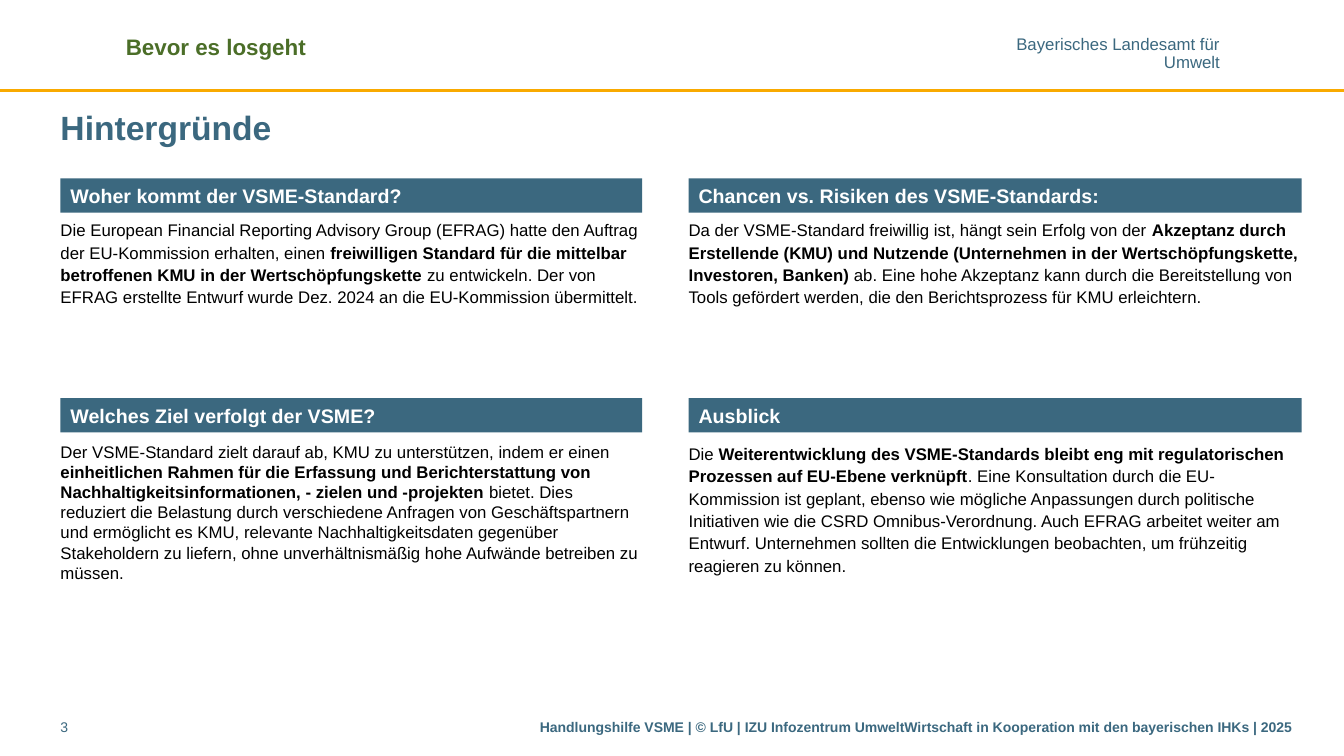
"""Build the slide on the background of the VSME standard."""
from dataclasses import dataclass
from typing import NamedTuple

from lxml.etree import SubElement
from pptx import Presentation
from pptx.dml.color import RGBColor
from pptx.enum.shapes import MSO_CONNECTOR, MSO_SHAPE
from pptx.enum.text import MSO_ANCHOR, MSO_AUTO_SIZE, PP_ALIGN
from pptx.oxml.ns import qn
from pptx.util import Inches, Pt

BLUE = RGBColor(0x3B, 0x68, 0x7F)
GREEN = RGBColor(0x4B, 0x6E, 0x28)
GOLD = RGBColor(0xF9, 0xAA, 0x00)
WHITE = RGBColor(0xFF, 0xFF, 0xFF)
BLACK = RGBColor(0x00, 0x00, 0x00)


class Box(NamedTuple):
    left: float
    top: float
    width: float
    height: float


class Column(NamedTuple):
    left: float
    bar_width: float
    text_width: float


class Row(NamedTuple):
    bar_top: float
    text_top: float
    text_height: float


@dataclass
class Section:
    col: int
    row: int
    heading: str
    runs: tuple
    spacing: object = Pt(16)
    holder: int = 0


@dataclass
class Label:
    box: Box
    lines: tuple
    size: int
    color: RGBColor = BLUE
    bold: bool = False
    align: PP_ALIGN = PP_ALIGN.LEFT
    spacing: float = 1.0
    insets: tuple = (0.1, 0.05)
    wrap: bool = True


BAR_HEIGHT = 0.34
COLUMNS = (Column(0.6, 5.77, 5.83), Column(6.83, 6.08, 6.08))
ROWS = (Row(1.77, 2.11, 1.06), Row(3.95, 4.33, 1.68))
FLAT = (0, 0.05)

SECTIONS = (
    Section(0, 0, "Woher kommt der VSME-Standard?", (
        "Die European Financial Reporting Advisory Group (EFRAG) hatte den Auftrag der "
        "EU-Kommission erhalten, einen ",
        "freiwilligen Standard für die mittelbar betroffenen KMU in der Wertschöpfungskette ",
        "zu entwickeln. Der von EFRAG erstellte Entwurf wurde Dez. 2024 an die "
        "EU-Kommission übermittelt."), holder=1),
    Section(1, 0, "Chancen vs. Risiken des VSME-Standards:", (
        "Da der VSME-Standard freiwillig ist, hängt sein Erfolg von der ",
        "Akzeptanz durch Erstellende (KMU) und Nutzende (Unternehmen in der "
        "Wertschöpfungskette, Investoren, Banken) ",
        "ab. Eine hohe Akzeptanz kann durch die Bereitstellung von Tools gefördert werden, "
        "die den Berichtsprozess für KMU erleichtern."), holder=2),
    Section(0, 1, "Welches Ziel verfolgt der VSME?", (
        "Der VSME-Standard zielt darauf ab, KMU zu unterstützen, indem er einen ",
        "einheitlichen Rahmen für die Erfassung und Berichterstattung von "
        "Nachhaltigkeitsinformationen, - zielen und -projekten ",
        "bietet. Dies reduziert die Belastung durch verschiedene Anfragen von "
        "Geschäftspartnern und ermöglicht es KMU, relevante Nachhaltigkeitsdaten gegenüber "
        "Stakeholdern zu liefern, ohne unverhältnismäßig hohe Aufwände betreiben zu müssen."),
        spacing=1.0),
    Section(1, 1, "Ausblick", (
        "Die ",
        "Weiterentwicklung des VSME-Standards bleibt eng mit regulatorischen Prozessen auf "
        "EU-Ebene verknüpft",
        ". Eine Konsultation durch die EU-Kommission ist geplant, ebenso wie mögliche "
        "Anpassungen durch politische Initiativen wie die CSRD Omnibus-Verordnung. Auch EFRAG "
        "arbeitet weiter am Entwurf. Unternehmen sollten die Entwicklungen beobachten, um "
        "frühzeitig reagieren zu können.")),
)

LABELS = (
    Label(Box(10.07, 0.37, 2.03, 0.34), ("Bayerisches Landesamt für", "Umwelt"), 12,
          align=PP_ALIGN.RIGHT, spacing=0.85, insets=(0, 0), wrap=False),
    Label(Box(1.15, 0.28, 3.7, 0.37), ("Bevor es losgeht",), 16, GREEN, True),
    Label(Box(5.17, 7.08, 7.74, 0.31), (
        "Handlungshilfe VSME | © LfU | IZU\u00a0Infozentrum UmweltWirtschaft in Kooperation "
        "mit den bayerischen IHKs | 2025",), 10, bold=True, align=PP_ALIGN.RIGHT),
    Label(Box(0.6, 7.08, 0.7, 0.31), ("3",), 10, insets=FLAT),
)


def apply(target: object, values: dict) -> None:
    """Set every attribute listed in values on the target."""
    for name, value in values.items():
        setattr(target, name, value)


def place(sp: object, box: Box) -> None:
    """Move and size a shape in inches."""
    apply(sp, {name: Inches(value) for name, value in box._asdict().items()})


def frame(sp: object, insets: tuple, anchor: MSO_ANCHOR, wrap: bool = True) -> object:
    """Format and return the text frame of a shape."""
    tf = sp.text_frame
    x, y = (Inches(inset) for inset in insets)
    apply(tf, {"word_wrap": wrap, "auto_size": MSO_AUTO_SIZE.NONE, "vertical_anchor": anchor,
               "margin_left": x, "margin_right": x, "margin_top": y, "margin_bottom": y})
    return tf


def write(p: object, runs: tuple, size: int, color: RGBColor, bold: bool = False,
          align: PP_ALIGN = PP_ALIGN.LEFT, spacing: object = 1.0) -> None:
    """Fill a paragraph with runs whose weight alternates."""
    apply(p, {"alignment": align, "line_spacing": spacing,
              "space_before": Pt(0), "space_after": Pt(0)})
    for i, text in enumerate(runs):
        r = p.add_run()
        r.text = text
        apply(r.font, {"name": "Arial", "size": Pt(size), "bold": bold != (i % 2 == 1)})
        r.font.color.rgb = color


def add_label(s: object, label: Label) -> None:
    """Add a text box with one paragraph per line."""
    sp = s.shapes.add_textbox(*map(Inches, label.box))
    tf = frame(sp, label.insets, MSO_ANCHOR.TOP, label.wrap)
    for i, line in enumerate(label.lines):
        p = tf.add_paragraph() if i else tf.paragraphs[0]
        write(p, (line,), label.size, label.color, label.bold, label.align, label.spacing)


def add_section(s: object, section: Section) -> None:
    """Add a heading bar and the text below it."""
    col, row = COLUMNS[section.col], ROWS[section.row]
    bar = s.shapes.add_shape(MSO_SHAPE.RECTANGLE, *map(
        Inches, (col.left, row.bar_top, col.bar_width, BAR_HEIGHT)))
    bar.shadow.inherit = False
    bar.fill.solid()
    bar.fill.fore_color.rgb = BLUE
    bar.line.fill.background()
    tf = frame(bar, (0.1, 0.05), MSO_ANCHOR.MIDDLE)
    write(tf.paragraphs[0], (section.heading,), 14, WHITE, True)

    box = Box(col.left, row.text_top, col.text_width if section.holder else col.bar_width,
              row.text_height)
    if section.holder:
        sp = s.placeholders[section.holder]
        place(sp, box)
    else:
        sp = s.shapes.add_textbox(*map(Inches, box))
    p = frame(sp, FLAT, MSO_ANCHOR.TOP).paragraphs[0]
    if section.holder:
        pPr = p._p.get_or_add_pPr()
        pPr.set("marL", "0")
        pPr.set("indent", "0")
        SubElement(pPr, qn("a:buNone"))
    write(p, section.runs, 12, BLACK, spacing=section.spacing)


def main() -> None:
    """Create and save the presentation."""
    prs = Presentation()
    apply(prs, {"slide_width": Inches(13.33), "slide_height": Inches(7.5)})
    s = prs.slides.add_slide(prs.slide_layouts[3])

    rule = s.shapes.add_connector(MSO_CONNECTOR.STRAIGHT, 0, Inches(0.9),
                                  prs.slide_width, Inches(0.9))
    rule.line.color.rgb = GOLD
    rule.line.width = Pt(2)
    SubElement(rule._element.spPr, qn("a:effectLst"))

    title = s.shapes.title
    place(title, Box(0.6, 0.99, 12.31, 0.55))
    tf = frame(title, FLAT, MSO_ANCHOR.MIDDLE)
    write(tf.paragraphs[0], ("Hintergründe",), 24, BLUE, True)

    for label in LABELS:
        add_label(s, label)
    for section in SECTIONS:
        add_section(s, section)
    prs.save("out.pptx")


if __name__ == "__main__":
    main()
